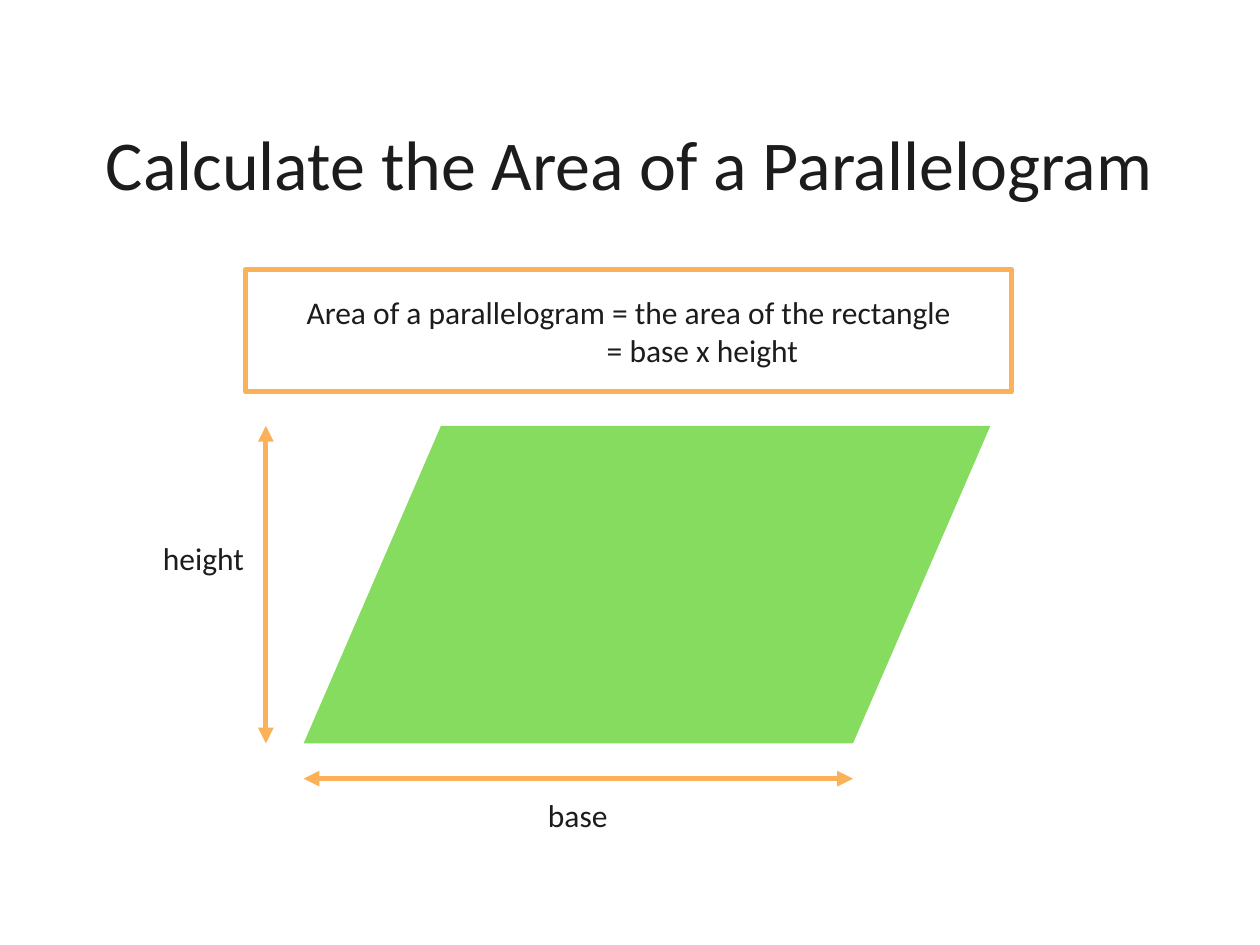
from lxml.etree import SubElement
from pptx import Presentation
from pptx.dml.color import RGBColor
from pptx.enum.shapes import MSO_CONNECTOR as Connector, MSO_SHAPE as Shape
from pptx.enum.text import MSO_ANCHOR as Anchor, PP_ALIGN as Align
from pptx.oxml.ns import qn
from pptx.util import Inches, Pt

INK = RGBColor(0x1C, 0x1C, 0x1C)
ORANGE = RGBColor(0xFB, 0xB1, 0x57)
GREEN = RGBColor(0x85, 0xDC, 0x5F)
FONT = "Calibri"

LEFT, TOP, WIDTH, HEIGHT = 2.41, 3.38, 5.45, 2.52
BASE = WIDTH * 0.8


def write_text(shape, text, size=18, line_spacing=1.0):
    frame = shape.text_frame
    frame.word_wrap = True
    frame.vertical_anchor = Anchor.MIDDLE
    frame.text = text
    for para in frame.paragraphs:
        para.alignment = Align.CENTER
        para.line_spacing = line_spacing
        for span in para.runs:
            span.font.name = FONT
            span.font.size = Pt(size)
            span.font.color.rgb = INK


def add_text(page, text, left, top, width, height, **style):
    box = page.shapes.add_textbox(
        Inches(left), Inches(top), Inches(width), Inches(height))
    write_text(box, text, **style)


def add_formula(page, lines):
    box = page.shapes.add_shape(
        Shape.RECTANGLE, Inches(1.95), Inches(2.14), Inches(6.08), Inches(0.97))
    box.shadow.inherit = False
    box.fill.background()
    box.line.color.rgb = ORANGE
    box.line.width = Pt(3)
    write_text(box, "\n".join(lines))
    last_line = box.text_frame.paragraphs[-1]
    last_line._p.get_or_add_pPr().set("marL", str(Inches(1.17)))


def add_parallelogram(page):
    parallelogram = page.shapes.add_shape(
        Shape.FLOWCHART_DATA,
        Inches(LEFT), Inches(TOP), Inches(WIDTH), Inches(HEIGHT))
    parallelogram.shadow.inherit = False
    parallelogram.fill.solid()
    parallelogram.fill.fore_color.rgb = GREEN
    parallelogram.line.fill.background()


def add_double_arrow(page, start_x, start_y, end_x, end_y):
    arrow = page.shapes.add_connector(
        Connector.STRAIGHT,
        Inches(start_x), Inches(start_y), Inches(end_x), Inches(end_y))
    arrow.line.color.rgb = ORANGE
    arrow.line.width = Pt(3)
    outline = arrow.line._get_or_add_ln()
    for end in ("a:headEnd", "a:tailEnd"):
        SubElement(outline, qn(end), type="triangle")
    SubElement(arrow._element.spPr, qn("a:effectLst"))


def main():
    deck = Presentation()
    deck.slide_width, deck.slide_height = Inches(10), Inches(7.5)
    page = deck.slides.add_slide(deck.slide_layouts[6])

    add_text(page, "Calculate the Area of a Parallelogram",
             0.5, 0.52, 8.99, 1.62, size=40, line_spacing=0.9)
    add_double_arrow(page, 2.11, TOP, 2.11, TOP + HEIGHT)
    add_double_arrow(page, LEFT, 6.18, LEFT + BASE, 6.18)
    add_formula(page, ["Area of a parallelogram = the area of the rectangle",
                       "= base x height"])
    add_text(page, "height", 1.12, 4.18, 0.99, 0.5)
    add_text(page, "base", 4.09, 6.22, 0.99, 0.5)
    add_parallelogram(page)

    deck.save("out.pptx")


if __name__ == "__main__":
    main()
